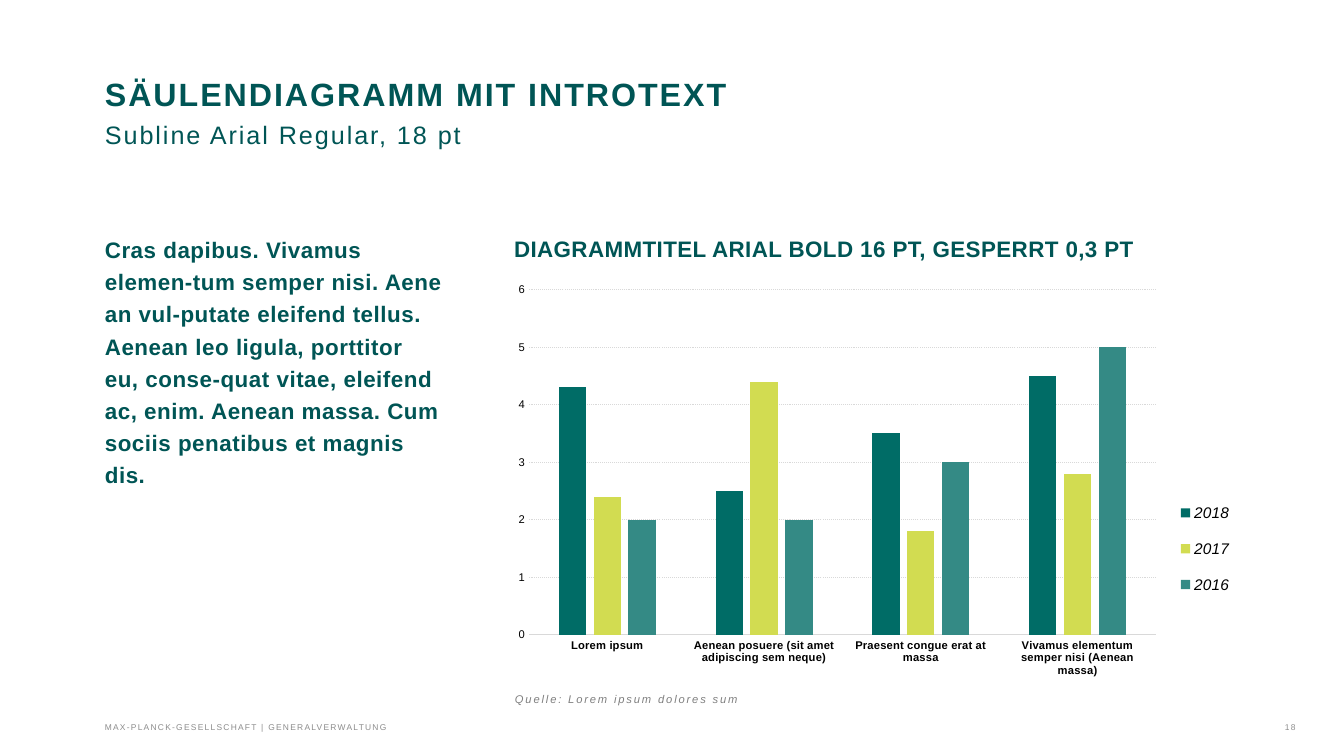
import pptx
import pptx.chart.data
import pptx.dml.color
import pptx.enum.chart
import pptx.enum.dml
import pptx.enum.text
import pptx.oxml
import pptx.oxml.ns
import pptx.util
from lxml import etree

TITLE = "SÄULENDIAGRAMM MIT INTROTEXT"
SUBLINE = "Subline Arial Regular, 18\u00a0pt"
INTRO = (
    "Cras dapibus. Vivamus elemen-tum semper nisi. Aene an vul-putate eleifend "
    "tellus. Aenean leo ligula, porttitor eu, conse-quat vitae, eleifend ac, enim. "
    "Aenean massa. Cum sociis penatibus et magnis dis."
)
CHART_TITLE = "DIAGRAMMTITEL ARIAL BOLD 16\u00a0PT, GESPERRT 0,3\u00a0PT"
SOURCE = "Quelle: Lorem ipsum dolores sum"
FOOTER = "MAX-PLANCK-GESELLSCHAFT | GENERALVERWALTUNG\t\t18"
CATEGORIES = [
    "Lorem ipsum",
    "Aenean posuere (sit amet adipiscing sem neque)",
    "Praesent congue erat at massa",
    "Vivamus elementum semper nisi (Aenean massa)",
]
SERIES = [
    ("2018", (4.3, 2.5, 3.5, 4.5), "dark"),
    ("2017", (2.4, 4.4, 1.8, 2.8), "lime"),
    ("2016", (2, 2, 3, 5), "teal"),
]
COLORS = {
    "heading": "005555", "dark": "006C66", "lime": "D2DC51", "teal": "348A85",
    "black": "000000", "grid": "D9D9D9", "source": "808080", "footer": "8C8C8C",
}
FONT = "Arial"
LEFT, CONTENT_WIDTH = 1.04, 11.26
CHART_LEFT = 5
FOOTER_TABS = (11.22, 11.81)
PLOT_AREA = (0.034, 0.036, 0.854, 0.798)
LEGEND_AREA = (0.91, 0.49, 0.09, 0.29)

Inches, Pt = pptx.util.Inches, pptx.util.Pt


def rgb(name):
    return pptx.dml.color.RGBColor.from_string(COLORS[name])


def style(font, size, color, bold=False, italic=False):
    font.name, font.size = FONT, Pt(size)
    font.bold, font.italic = bold, italic
    font.color.rgb = rgb(color)


def add_span(para, text, size, color, spacing, bold=False, italic=False):
    """Add a run; spacing is the letter spacing in points."""
    span = para.add_run()
    span.text = text
    style(span.font, size, color, bold, italic)
    span.font._element.set("spc", str(round(spacing * 100)))


def prepare(box, place, wrap=True, inset=0):
    """Place a text shape, anchor it at the top and return its first paragraph."""
    box.left, box.top, box.width, box.height = map(Inches, place)
    frame = box.text_frame
    frame.word_wrap = wrap
    frame.auto_size = pptx.enum.text.MSO_AUTO_SIZE.NONE
    frame.vertical_anchor = pptx.enum.text.MSO_ANCHOR.TOP
    frame.margin_left = frame.margin_right = Inches(inset)
    frame.margin_top = frame.margin_bottom = Inches(inset / 2)
    return frame.paragraphs[0]


def add_box(page, place, wrap=True, inset=0):
    box = page.shapes.add_textbox(*map(Inches, place))
    return prepare(box, place, wrap, inset)


def set_layout(parent, area, inner=False):
    """Give a plot area or legend a fixed place, as shares of the chart."""
    for old in parent.findall(pptx.oxml.ns.qn("c:layout")):
        parent.remove(old)
    entries = [("layoutTarget", "inner")] if inner else []
    entries += [("xMode", "edge"), ("yMode", "edge"), *zip("xywh", area)]
    layout = etree.Element(pptx.oxml.ns.qn("c:layout"))
    manual = etree.SubElement(layout, pptx.oxml.ns.qn("c:manualLayout"))
    for tag, value in entries:
        etree.SubElement(manual, pptx.oxml.ns.qn("c:" + tag)).set("val", str(value))
    position = parent.find(pptx.oxml.ns.qn("c:legendPos"))
    if position is None:
        parent.insert(0, layout)
    else:
        position.addnext(layout)


def add_column_chart(page):
    data = pptx.chart.data.CategoryChartData()
    data.categories = CATEGORIES
    for name, values, _ in SERIES:
        data.add_series(name, values)
    kinds = pptx.enum.chart
    chart = page.shapes.add_chart(
        kinds.XL_CHART_TYPE.COLUMN_CLUSTERED,
        *map(Inches, (CHART_LEFT, 2.72, 7.28, 4.29)), data,
    ).chart
    chart.has_title = False
    style(chart.font, 10, "black")

    plot = chart.plots[0]
    plot.gap_width, plot.overlap, plot.vary_by_categories = 219, -27, False
    for series, (_, _, color) in zip(plot.series, SERIES):
        series.format.fill.solid()
        series.format.fill.fore_color.rgb = rgb(color)

    for axis in (chart.category_axis, chart.value_axis):
        axis.major_tick_mark = axis.minor_tick_mark = kinds.XL_TICK_MARK.NONE
        style(axis.tick_labels.font, 8, "black", bold=axis is not chart.value_axis)
    style(chart.category_axis.tick_labels.font, 8, "black", bold=True)
    style(chart.value_axis.tick_labels.font, 8, "black")
    values = chart.value_axis
    values.minimum_scale, values.maximum_scale, values.major_unit = 0, 6, 1
    values.format.line.fill.background()
    values.has_major_gridlines = True
    grid_line = values.major_gridlines.format.line
    for line in (chart.category_axis.format.line, grid_line):
        line.color.rgb = rgb("grid")
        line.width = Pt(0.75)
    grid_line.dash_style = pptx.enum.dml.MSO_LINE.ROUND_DOT

    chart.has_legend = True
    chart.legend.position = kinds.XL_LEGEND_POSITION.RIGHT
    chart.legend.include_in_layout = False
    style(chart.legend.font, 11, "black", italic=True)
    set_layout(chart.legend._element, LEGEND_AREA)
    set_layout(chart._chartSpace.chart.plotArea, PLOT_AREA, inner=True)


def add_footer(page):
    para = add_box(page, (LEFT, 7.06, CONTENT_WIDTH, 0.2), wrap=False)
    tabs = etree.SubElement(para._p.get_or_add_pPr(), pptx.oxml.ns.qn("a:tabLst"))
    for position in FOOTER_TABS:
        tab = etree.SubElement(tabs, pptx.oxml.ns.qn("a:tab"))
        tab.set("pos", str(Inches(position)))
        tab.set("algn", "r")
    add_span(para, FOOTER, 6, "footer", 0.9)
    page.shapes[-1].text_frame.vertical_anchor = pptx.enum.text.MSO_ANCHOR.BOTTOM


def main():
    deck = pptx.Presentation()
    deck.slide_width, deck.slide_height = Inches(13.33), Inches(7.5)
    page = deck.slides.add_slide(deck.slide_layouts[5])
    align = pptx.enum.text.PP_ALIGN

    para = prepare(page.shapes.title, (LEFT, 0.76, CONTENT_WIDTH, 1.54))
    para.alignment, para.line_spacing = align.LEFT, Pt(26)
    add_span(para, TITLE, 23, "heading", 1.4, bold=True)
    para.add_line_break()
    add_span(para, SUBLINE, 18, "heading", 1.4)

    para = add_box(page, (LEFT, 2.29, 3.35, 4.71))
    para.line_spacing = Pt(23)
    add_span(para, INTRO, 16, "heading", 0.4, bold=True)

    add_column_chart(page)

    para = add_box(page, (CHART_LEFT, 2.28, 7.3, 0.37), inset=0.1)
    add_span(para, CHART_TITLE, 16, "heading", 0.3, bold=True)

    para = add_box(page, (5.07, 6.87, 2.25, 0.13), wrap=False)
    para.alignment = align.RIGHT
    add_span(para, SOURCE, 8, "source", 1.3, italic=True)

    add_footer(page)
    deck.save("out.pptx")


if __name__ == "__main__":
    main()
